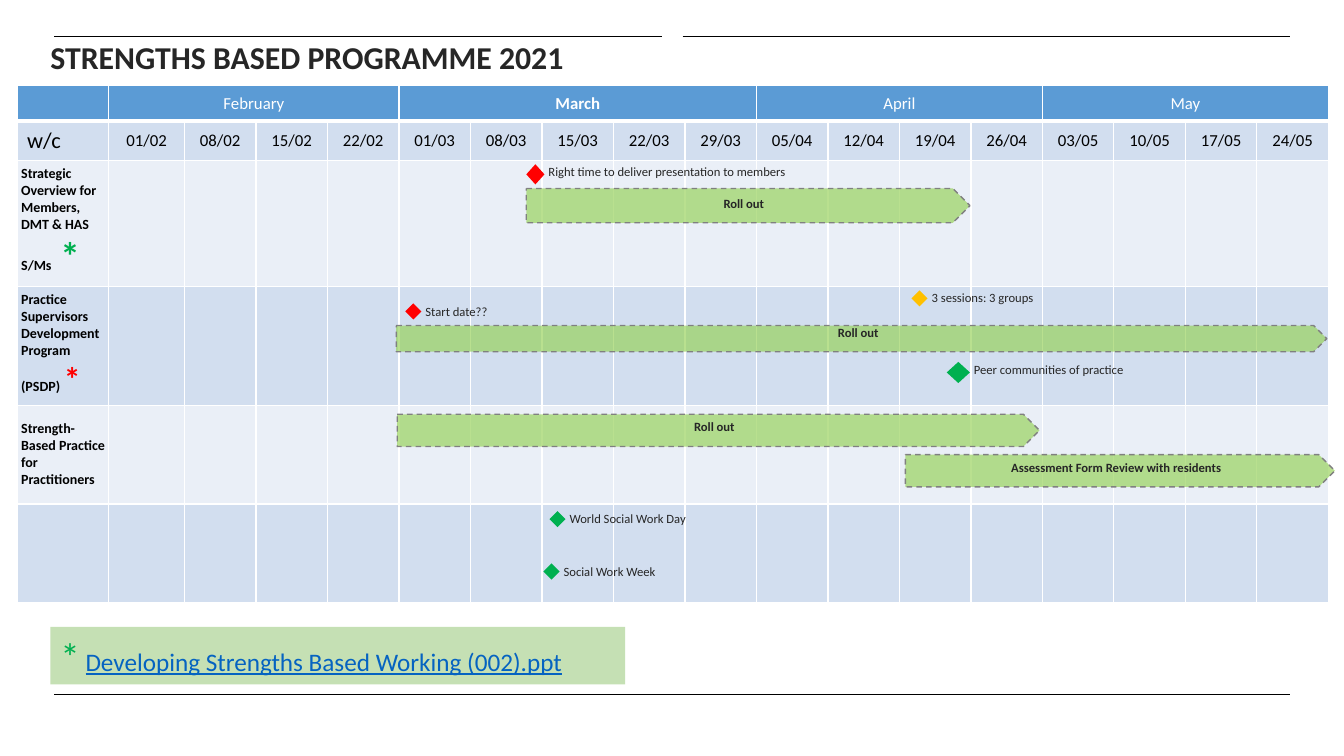
from lxml import etree
from pptx import Presentation
from pptx import util as u
from pptx.dml.color import RGBColor
from pptx.enum import dml, shapes, text
from pptx.oxml import ns

FONT = "Calibri"
INK, BLACK, WHITE = "262626", "000000", "FFFFFF"
RED, GREEN, AMBER = "FF0000", "00B050", "FFC000"
HEAD, DARK, PALE = "5B9BD5", "D2DEEF", "EAEFF7"

MONTHS = [("February", 4), ("March", 5), ("April", 4), ("May", 4)]
WEEKS = ("01/02 08/02 15/02 22/02 01/03 08/03 15/03 22/03 29/03 "
         "05/04 12/04 19/04 26/04 03/05 10/05 17/05 24/05").split()
ROWS = [0.35, 0.39, 1.24, 1.16, 0.98, 0.98]
LABELS = [
    [("Strategic Overview for Members, DMT & HAS S/Ms", 10, BLACK),
     (" *", 28, GREEN)],
    [("Practice Supervisors Development Program (PSDP)", 10, BLACK),
     (" ", 12, BLACK), ("*", 24, RED)],
    [("Strength-Based Practice for Practitioners", 10, BLACK)],
]
# Each lane: bars (x, y, w, h, text), then marks (x, y, w, h, colour, text)
LANES = [
    ([(5.05, 0.28, 4.4, 0.34, "Roll out")],
     [(5.05, 0.04, 0.18, 0.2, RED,
       "Right time to deliver presentation to members")]),
    ([(3.76, 0.4, 9.23, 0.26, "Roll out")],
     [(3.85, 0.18, 0.16, 0.16, RED, "Start date??"),
      (8.87, 0.05, 0.16, 0.16, AMBER, "3 sessions: 3 groups"),
      (9.22, 0.76, 0.23, 0.21, GREEN, "Peer communities of practice")]),
    ([(3.77, 0.12, 6.37, 0.32, "Roll out"),
      (8.81, 0.52, 4.26, 0.32, "Assessment Form Review with residents")], []),
    ([], [(5.28, 0.1, 0.16, 0.16, GREEN, "World Social Work Day"),
          (5.22, 0.62, 0.16, 0.16, GREEN, "Social Work Week")]),
]


def rgb(code):
    return RGBColor.from_string(code)


def box(*vals):
    return [u.Inches(v) for v in vals]


def style(font, size, color, bold=False):
    font.name, font.size, font.bold = FONT, u.Pt(size), bold
    font.color.rgb = rgb(color)


def pad(item, side, end):
    item.margin_left = item.margin_right = u.Inches(side)
    item.margin_top = item.margin_bottom = u.Inches(end)


def add_run(para, words, size, color, bold=False):
    run = para.add_run()
    run.text = words
    style(run.font, size, color, bold)
    return run


def shape(slide, kind, x, y, w, h, color):
    item = slide.shapes.add_shape(kind, *box(x, y, w, h))
    item.shadow.inherit = False
    item.fill.solid()
    item.fill.fore_color.rgb = rgb(color)
    item.line.fill.background()
    return item


def rule(slide, x, y, w):
    line = slide.shapes.add_connector(
        shapes.MSO_CONNECTOR.STRAIGHT, *box(x, y, x + w, y))
    line.line.color.rgb = rgb(BLACK)
    line.line.width = u.Pt(0.25)
    etree.SubElement(line._element.spPr, ns.qn("a:effectLst"))


def title(slide, x, y, w, h):
    head = slide.shapes.title
    head.left, head.top, head.width, head.height = box(x, y, w, h)
    frame = head.text_frame
    frame.text = "STRENGTHS BASED PROGRAMME 2021"
    frame.auto_size = text.MSO_AUTO_SIZE.NONE
    frame.vertical_anchor = text.MSO_ANCHOR.TOP
    pad(frame, 0, 0)
    para = frame.paragraphs[0]
    para.alignment = text.PP_ALIGN.LEFT
    para.line_spacing = u.Pt(22.7)
    style(para.font, 22.7, INK, True)


def edge(cell, low):
    """Draw white borders, with the bottom one low points wide."""
    props = cell._tc.get_or_add_tcPr()
    for side in "LRTB":
        width = low if side == "B" else 1
        line = etree.SubElement(props, ns.qn(f"a:ln{side}"),
                                w=str(u.Pt(width)))
        fill = etree.SubElement(line, ns.qn("a:solidFill"))
        etree.SubElement(fill, ns.qn("a:srgbClr"), val=WHITE)


def fill_cell(cell, runs, bold=False, center=True):
    para = cell.text_frame.paragraphs[0]
    if center:
        para.alignment = text.PP_ALIGN.CENTER
    for words, size, color in runs:
        add_run(para, words, size, color, bold)


def calendar(slide, x, y, w, h):
    grid = slide.shapes.add_table(
        len(ROWS), len(WEEKS) + 1, *box(x, y, w, h)).table
    first, second = 0.91, 0.75
    week = (w - first - second) / (len(WEEKS) - 1)
    for col, size in zip(grid.columns, [first, second] + [week] * 16):
        col.width = u.Inches(size)
    for r, size in enumerate(ROWS):
        grid.rows[r].height = u.Inches(size)
        for cell in grid.rows[r].cells:
            edge(cell, 3 if r == 0 else 1)
            cell.fill.solid()
            cell.fill.fore_color.rgb = rgb(
                HEAD if r == 0 else DARK if r % 2 else PALE)
            cell.vertical_anchor = text.MSO_ANCHOR.MIDDLE
    pad(grid.cell(0, 0), 0, 0)
    c = 1
    for month, span in MONTHS:
        cell = grid.cell(0, c)
        cell.merge(grid.cell(0, c + span - 1))
        fill_cell(cell, [(month, 12, WHITE)], month == "March")
        c += span
    fill_cell(grid.cell(1, 0), [("w/c", 16, BLACK)], center=False)
    for c, date in enumerate(WEEKS, 1):
        fill_cell(grid.cell(1, c), [(date, 12, BLACK)])
    for r, runs in enumerate(LABELS, 2):
        cell = grid.cell(r, 0)
        pad(cell, 0.04, 0.05)
        fill_cell(cell, runs, True, False)


def bar(slide, x, y, w, h, words):
    item = shape(slide, shapes.MSO_SHAPE.PENTAGON, x, y, w, h, "92D050")
    tint = item._element.spPr.find(".//" + ns.qn("a:srgbClr"))
    etree.SubElement(tint, ns.qn("a:alpha"), val="64000")
    item.line.color.rgb = rgb("808080")
    item.line.width = u.Pt(1)
    item.line.dash_style = dml.MSO_LINE.DASH
    frame = item.text_frame
    frame.text = words
    frame.vertical_anchor = text.MSO_ANCHOR.BOTTOM
    pad(frame, 0.16, 0.12)
    para = frame.paragraphs[0]
    para.alignment = text.PP_ALIGN.CENTER
    style(para.font, 9, INK, True)


def mark(slide, x, y, w, h, color, words):
    """Place a milestone diamond with its label to the right."""
    shape(slide, shapes.MSO_SHAPE.DIAMOND, x, y, w, h, color)
    note = slide.shapes.add_textbox(*box(x + w + 0.04, y, 2.6, 0.32))
    frame = note.text_frame
    frame.word_wrap = True
    frame.text = words
    pad(frame, 0, 0)
    style(frame.paragraphs[0].font, 9, INK)


def lane(slide, x, y, bars, marks):
    for dx, dy, *rest in bars:
        bar(slide, x + dx, y + dy, *rest)
    for dx, dy, *rest in marks:
        mark(slide, x + dx, y + dy, *rest)


def footer(slide, x, y, w, h):
    item = shape(slide, shapes.MSO_SHAPE.RECTANGLE, x, y, w, h, "C5E0B4")
    frame = item.text_frame
    frame.vertical_anchor = text.MSO_ANCHOR.TOP
    para = frame.paragraphs[0]
    para.alignment = text.PP_ALIGN.LEFT
    add_run(para, "*", 28, GREEN)
    add_run(para, " ", 18, BLACK)
    link = add_run(para, "Developing Strengths Based Working (002).ppt",
                   18, "0563C1")
    link.font.underline = True


def main():
    deck = Presentation()
    deck.slide_width, deck.slide_height = box(13.33, 7.5)
    slide = deck.slides.add_slide(deck.slide_layouts[5])
    for x, y, w in [(0.54, 0.36, 6.03), (6.77, 0.36, 6.02),
                    (0.54, 6.89, 12.25)]:
        rule(slide, x, y, w)
    title(slide, 0.5, 0.44, 7.79, 0.61)
    left, top = 0.17, 0.85
    calendar(slide, left, top, 13.01, sum(ROWS))
    for r, (bars, marks) in enumerate(LANES, 2):
        lane(slide, left, top + sum(ROWS[:r]), bars, marks)
    footer(slide, 0.5, 6.22, 5.7, 0.57)
    deck.save("out.pptx")


if __name__ == "__main__":
    main()
